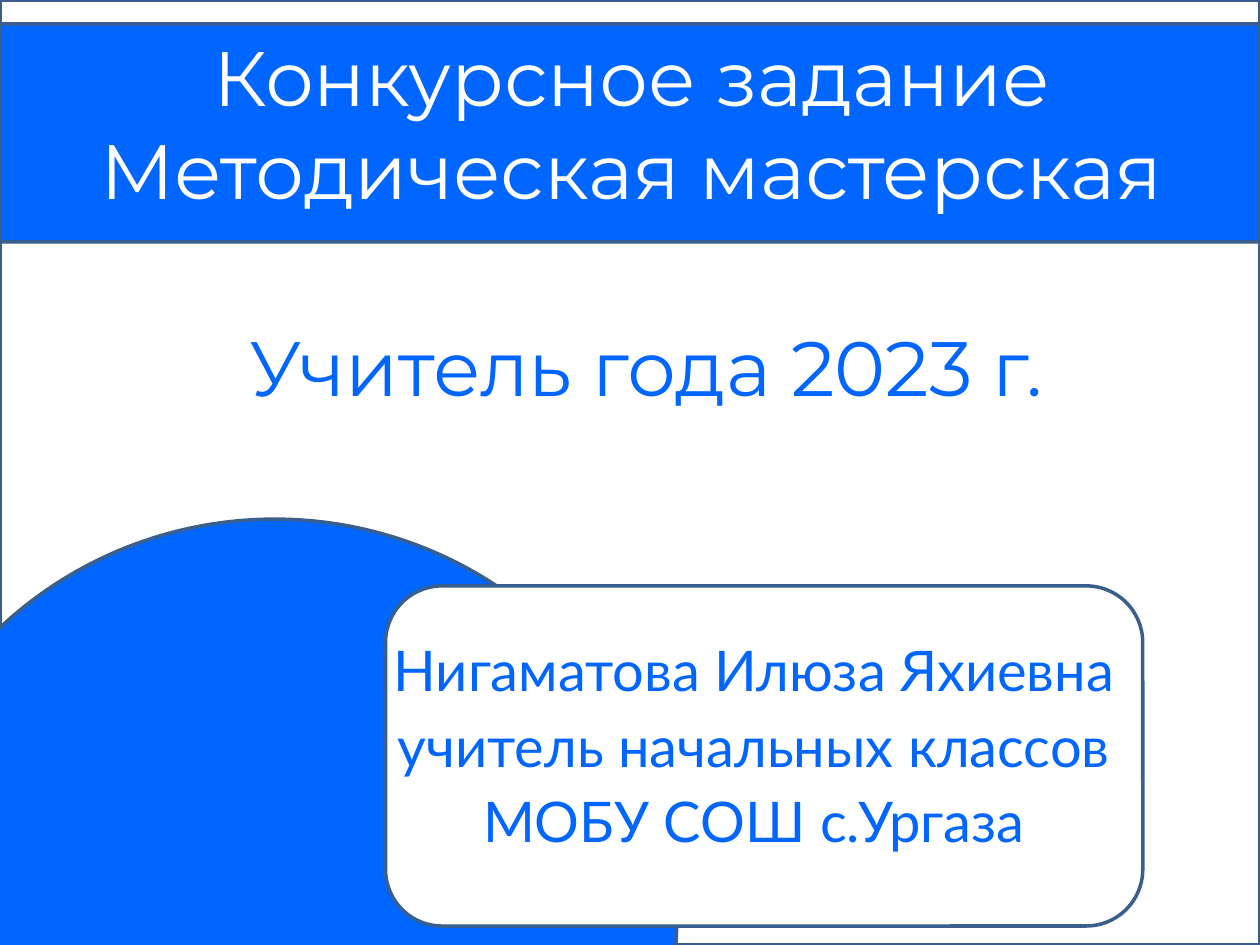
from pptx import Presentation
from pptx.dml.color import RGBColor
from pptx.enum.shapes import MSO_SHAPE
from pptx.enum.text import MSO_ANCHOR, MSO_AUTO_SIZE, PP_ALIGN
from pptx.util import Inches, Pt

COLORS = {"blue": "0066FF", "outline": "3A5F8C", "white": "FFFFFF"}


def add_panel(slide, kind, box, fill=None):
    """Outlined shape; without a fill colour it stays see-through."""
    panel = slide.shapes.add_shape(kind, *map(Inches, box))
    panel.shadow.inherit = False
    if fill:
        panel.fill.solid()
        panel.fill.fore_color.rgb = RGBColor.from_string(COLORS[fill])
    else:
        panel.fill.background()
    panel.line.color.rgb = RGBColor.from_string(COLORS["outline"])
    panel.line.width = Pt(2)


def write(holder, box, paragraphs, *, font, size, color,
          anchor=MSO_ANCHOR.MIDDLE, space_before=0):
    """Fill a text holder; each paragraph is a list of lines."""
    holder.left, holder.top, holder.width, holder.height = map(Inches, box)
    frame = holder.text_frame
    frame.word_wrap = True
    frame.auto_size = MSO_AUTO_SIZE.NONE
    frame.vertical_anchor = anchor
    for index, lines in enumerate(paragraphs):
        paragraph = frame.add_paragraph() if index else frame.paragraphs[0]
        paragraph.alignment = PP_ALIGN.CENTER
        paragraph.space_before = Pt(space_before)
        for number, line in enumerate(lines):
            if number:
                paragraph.add_line_break()
            run = paragraph.add_run()
            run.text = line
            run.font.name = font
            run.font.size = Pt(size)
            run.font.color.rgb = RGBColor.from_string(COLORS[color])


def bring_to_front(holder):
    holder.element.getparent().append(holder.element)


def add_background(slide, width, height):
    add_panel(slide, MSO_SHAPE.ROUNDED_RECTANGLE, (-0.83, 0.19, 11.5, 1.73), "blue")
    add_panel(slide, MSO_SHAPE.RECTANGLE, (0, 0, width, height))
    add_panel(slide, MSO_SHAPE.OVAL, (-1.01, 4.12, 6.38, 6.38), "blue")


def add_heading(slide, box):
    title = slide.shapes.title
    bring_to_front(title)
    write(title, box, [["Конкурсное задание", "Методическая мастерская"]],
          font="Montserrat", size=44, color="white")


def add_author_card(slide, box):
    left, top, width, height = box
    add_panel(slide, MSO_SHAPE.ROUNDED_RECTANGLE, box, "white")
    author = slide.placeholders[1]
    bring_to_front(author)
    write(author, (left - 1.09, top + 0.34, width + 2.02, height - 0.6),
          [["Нигаматова Илюза Яхиевна"],
           ["учитель начальных классов"],
           ["МОБУ СОШ с.Ургаза"]],
          font="Lato", size=32, color="blue",
          anchor=MSO_ANCHOR.TOP, space_before=5)


def add_contest_name(slide, box):
    contest = slide.shapes.add_textbox(*map(Inches, box))
    write(contest, box, [["Учитель года 2023 г."]],
          font="Montserrat", size=44, color="blue")


def main():
    width, height = 10, 7.5
    deck = Presentation()
    deck.slide_width, deck.slide_height = Inches(width), Inches(height)
    slide = deck.slides.add_slide(deck.slide_layouts[0])
    add_background(slide, width, height)
    add_heading(slide, (-0.07, -0.29, 10.17, 2.52))
    add_author_card(slide, (3.06, 4.65, 6.01, 2.7))
    add_contest_name(slide, (1.38, 2.31, 7.5, 1.19))
    deck.save("out.pptx")


if __name__ == "__main__":
    main()
